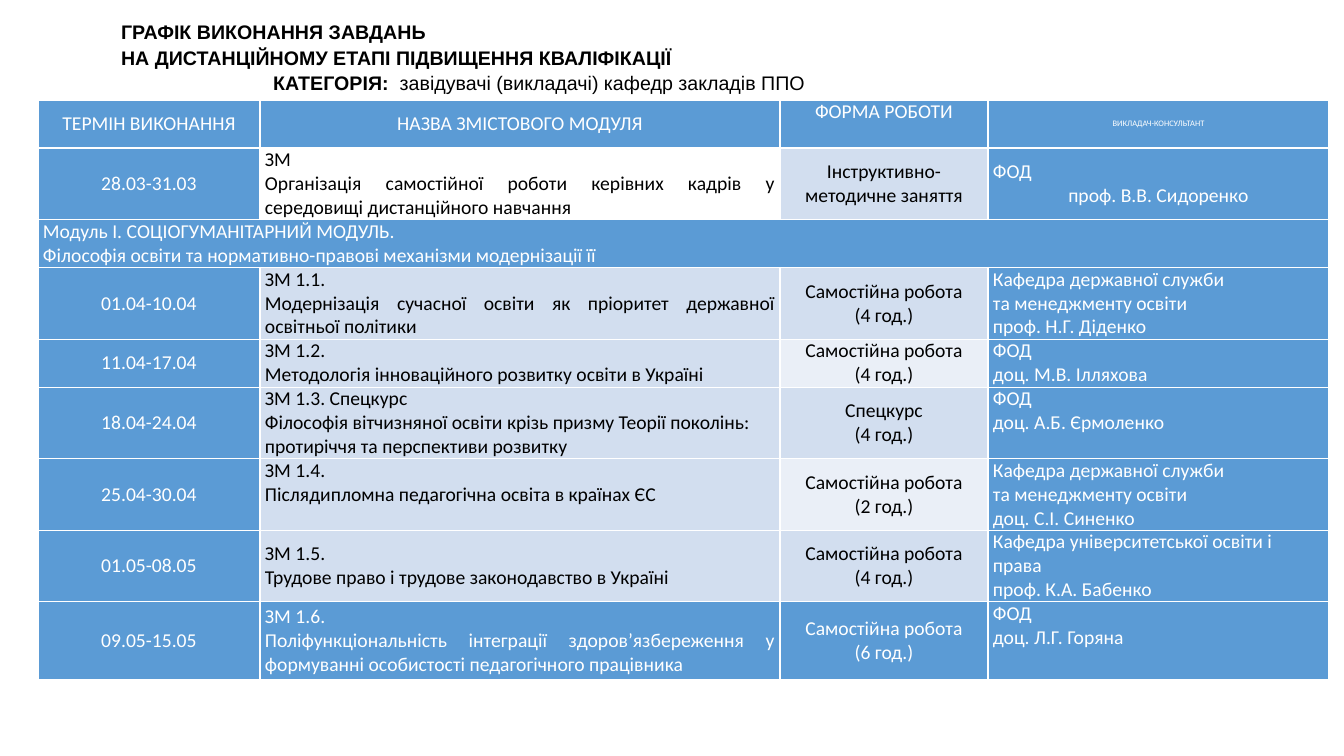
from pptx import Presentation
from pptx import util as u
from pptx.dml.color import RGBColor
from pptx.enum import text
from pptx.oxml import parse_xml
from pptx.oxml.ns import nsdecls

EMU_PER_PX = 914400 / 100.8
WHITE = RGBColor(0xFF, 0xFF, 0xFF)
BLACK = RGBColor(0, 0, 0)
BLUE = RGBColor(0x5B, 0x9B, 0xD5)
PALE = RGBColor(0xD2, 0xDE, 0xEF)
PALEST = RGBColor(0xEA, 0xEF, 0xF7)

LEFT = text.PP_ALIGN.LEFT
CENTER = text.PP_ALIGN.CENTER
JUSTIFY = text.PP_ALIGN.JUSTIFY
TOP = text.MSO_ANCHOR.TOP
MIDDLE = text.MSO_ANCHOR.MIDDLE

HEADINGS = ["ТЕРМІН ВИКОНАННЯ", "НАЗВА ЗМІСТОВОГО МОДУЛЯ", "ФОРМА РОБОТИ", "ВИКЛАДАЧ-КОНСУЛЬТАНТ"]
MODULE = "Модуль І. СОЦІОГУМАНІТАРНИЙ МОДУЛЬ.\nФілософія освіти та нормативно-правові механізми модернізації її"
SCHEDULE = [
    HEADINGS,
    ["28.03-31.03",
     "ЗМ\nОрганізація самостійної роботи керівних кадрів у середовищі дистанційного навчання",
     "Інструктивно-методичне заняття", "ФОД\nпроф. В.В. Сидоренко"],
    [MODULE],
    ["01.04-10.04",
     "ЗМ 1.1.\nМодернізація сучасної освіти як пріоритет державної освітньої політики",
     "Самостійна робота\n(4 год.)",
     "Кафедра державної служби\nта менеджменту освіти\nпроф. Н.Г. Діденко"],
    ["11.04-17.04", "ЗМ 1.2.\nМетодологія інноваційного розвитку освіти в Україні",
     "Самостійна робота\n(4 год.)", "ФОД\nдоц. М.В. Ілляхова"],
    ["18.04-24.04",
     "ЗМ 1.3. Спецкурс\nФілософія вітчизняної освіти крізь призму Теорії поколінь: "
     "протиріччя та перспективи розвитку",
     "Спецкурс\n(4 год.)", "ФОД\nдоц. А.Б. Єрмоленко"],
    ["25.04-30.04", "ЗМ 1.4.\nПіслядипломна педагогічна освіта в країнах ЄС",
     "Самостійна робота\n(2 год.)",
     "Кафедра державної служби\nта менеджменту освіти\nдоц. С.І. Синенко"],
    ["01.05-08.05", "ЗМ 1.5.\nТрудове право і трудове законодавство в Україні",
     "Самостійна робота\n(4 год.)", "Кафедра університетської освіти і права\nпроф. К.А. Бабенко"],
    ["09.05-15.05",
     "ЗМ 1.6.\nПоліфункціональність інтеграції здоров’язбереження у формуванні "
     "особистості педагогічного працівника",
     "Самостійна робота\n(6 год.)", "ФОД\nдоц. Л.Г. Горяна"],
]
COLUMN_WIDTHS = [222, 520, 208, 341]
ROW_HEIGHTS = [48, 71, 48, 71, 48, 71, 71, 71, 78]
HEADER, INTRO, BAND, SPECIAL, LABOUR, LAST = 0, 1, 2, 5, 7, 8
NAME, FORM, TEACHER = 1, 2, 3


def px(length):
    return u.Emu(round(length * EMU_PER_PX))


def cell_look(row, column):
    """Return fill, text colour, alignment and anchor for a place in the schedule."""
    if row == HEADER:
        return BLUE, WHITE, CENTER, TOP if column == FORM else MIDDLE
    if row == BAND:
        return BLUE, WHITE, LEFT, TOP
    fill, color, align, anchor = BLUE, WHITE, CENTER, MIDDLE
    if column in (NAME, FORM) and row != LAST:
        fill, color = PALE, BLACK
    if column == NAME:
        align = LEFT if row == SPECIAL else JUSTIFY
        anchor = MIDDLE if row in (INTRO, LABOUR, LAST) else TOP
        fill = WHITE if row == INTRO else fill
    elif column == FORM and row in (4, 6):
        fill = PALEST
    elif column == TEACHER:
        align, anchor = LEFT, MIDDLE if row == INTRO else TOP
    return fill, color, align, anchor


class SchedulePage:
    """The slide together with its fonts and text size."""

    title_font = "Arial"
    table_font = "Calibri"
    size = 14

    def __init__(self, deck):
        self.page = deck.slides.add_slide(deck.slide_layouts[5])

    def style(self, span, font, color, size=size, bold=False):
        span.font.name = font
        span.font.size = u.Pt(size)
        span.font.bold = bold
        span.font.color.rgb = color

    def title(self, left, top, width, height, lines, indent):
        """Fill the title; each line is a list of (words, size, bold), the last line indented."""
        box = self.page.shapes.title
        box.left, box.top, box.width, box.height = map(px, (left, top, width, height))
        frame = box.text_frame
        frame.auto_size = text.MSO_AUTO_SIZE.NONE
        frame.word_wrap = True
        frame.vertical_anchor = TOP
        frame.margin_top = px(7)
        for number, spans in enumerate(lines):
            para = frame.add_paragraph() if number else frame.paragraphs[0]
            para.alignment = LEFT
            for words, size, bold in spans:
                span = para.add_run()
                span.text = words
                self.style(span, self.title_font, BLACK, size, bold)
        properties = para._p.get_or_add_pPr()
        properties.set("marL", "0")
        properties.set("indent", str(px(indent)))

    def borders(self, cell):
        properties = cell._tc.get_or_add_tcPr()
        for number, side in enumerate(("lnL", "lnR", "lnT", "lnB")):
            properties.insert(number, parse_xml(
                f'<a:{side} {nsdecls("a")} w="12700"><a:solidFill>'
                f'<a:srgbClr val="{WHITE}"/></a:solidFill></a:{side}>'))

    def cell(self, cell, words, look, size):
        fill, color, align, anchor = look
        cell.fill.solid()
        cell.fill.fore_color.rgb = fill
        cell.margin_left = cell.margin_right = px(5)
        cell.margin_top = cell.margin_bottom = 0
        cell.vertical_anchor = anchor
        cell.text_frame.text = words
        for para in cell.text_frame.paragraphs:
            para.alignment = align
            for span in para.runs:
                self.style(span, self.table_font, color, size)

    def table(self, left, top, widths, heights, rows):
        frame = self.page.shapes.add_table(
            len(heights), len(widths), px(left), px(top), px(sum(widths)), px(sum(heights)))
        grid = frame.table
        for column, width in zip(grid.columns, widths):
            column.width = px(width)
        for row, height in zip(grid.rows, heights):
            row.height = px(height)
        grid.cell(BAND, 0).merge(grid.cell(BAND, TEACHER))
        for row, entries in enumerate(rows):
            for column, words in enumerate(entries):
                size = 6 if (row, column) == (HEADER, TEACHER) else self.size
                self.cell(grid.cell(row, column), words, cell_look(row, column), size)
        for cell in grid.iter_cells():
            self.borders(cell)
        return grid


def main():
    deck = Presentation()
    deck.slide_width, deck.slide_height = px(1344), px(756)
    schedule = SchedulePage(deck)
    grid = schedule.table(38, 100, COLUMN_WIDTHS, ROW_HEIGHTS, SCHEDULE)
    grid.cell(INTRO, TEACHER).text_frame.paragraphs[1].alignment = CENTER
    schedule.title(111, 13, 1124, 115, [
        [("ГРАФІК ВИКОНАННЯ ЗАВДАНЬ", 14, True)],
        [("НА ДИСТАНЦІЙНОМУ ЕТАПІ ПІДВИЩЕННЯ КВАЛІФІКАЦІЇ", 14, True), (" ", 16, False)],
        [("КАТЕГОРІЯ:", 14, True), ("  завідувачі (викладачі) кафедр закладів ППО", 14, False)],
    ], indent=152)
    deck.save("out.pptx")


if __name__ == "__main__":
    main()
